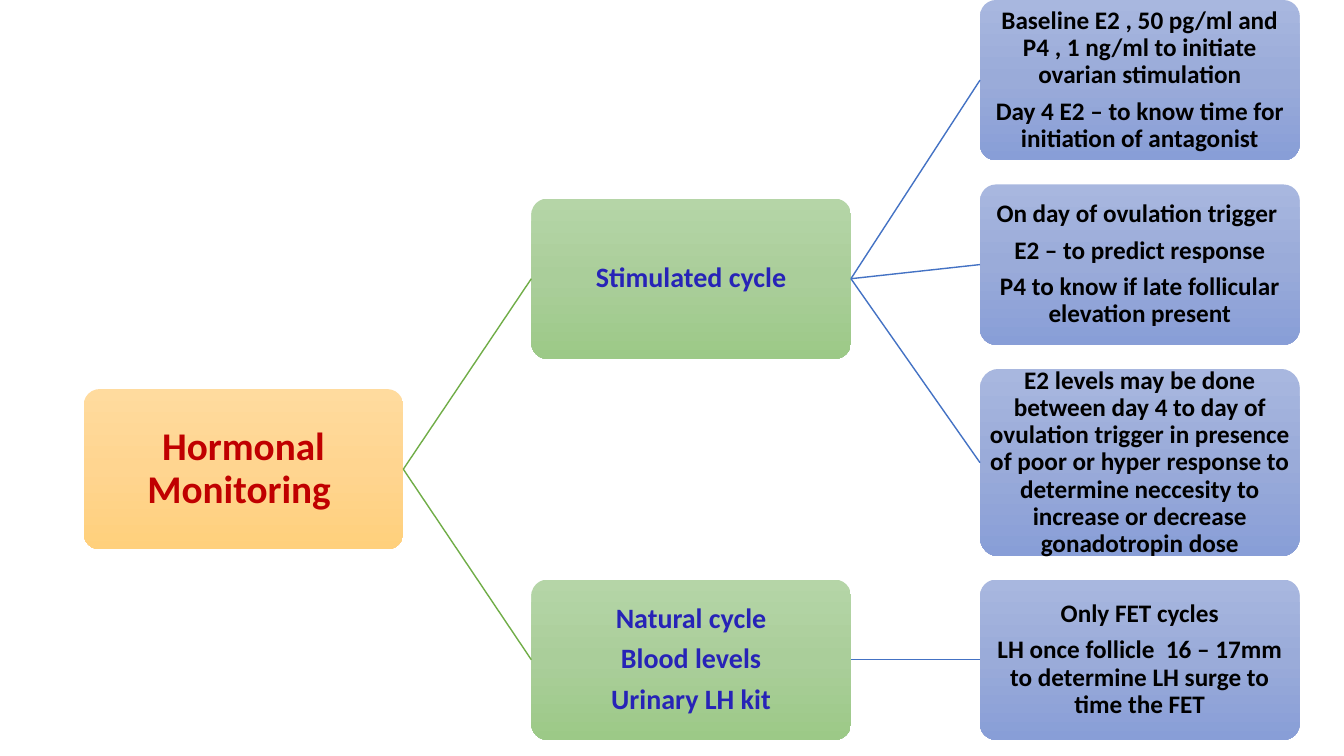
from copy import deepcopy
from dataclasses import dataclass

from pptx import Presentation
from pptx.dml.color import RGBColor as Rgb
from pptx.enum.shapes import MSO_CONNECTOR as Link, MSO_SHAPE as Form
from pptx.enum.text import MSO_ANCHOR as Anchor, PP_ALIGN as Align
from pptx.oxml.ns import qn
from pptx.shapes.autoshape import Shape
from pptx.slide import Slide
from pptx.util import Emu, Pt

SCALE = 9144
WIDE, HIGH = 317, 159
COLS = (83, 527, 972)
INSET = 1

HEX = {
    "red": "C00000", "blue": "2723B7", "black": "000000",
    "gold1": "FFDB9E", "gold2": "FFD590", "gold3": "FFD07C",
    "leaf1": "B5D5A7", "leaf2": "AACE9A", "leaf3": "9CC987",
    "sky1": "A8B7DF", "sky2": "9AABD9", "sky3": "889ED7",
    "green": "70AD47", "azure": "4472C4",
}


@dataclass(frozen=True)
class Style:
    fill: str
    ink: str
    size: int
    edge: str


@dataclass(frozen=True)
class Node:
    level: int
    top: int
    lines: tuple[str, ...]
    kids: tuple["Node", ...] = ()
    high: int = HIGH


STYLES = (
    Style("gold", "red", 28, "green"),
    Style("leaf", "blue", 20, "green"),
    Style("sky", "black", 18, "azure"),
)

STIM = Node(1, 197, ("Stimulated cycle",), (
    Node(2, 0, (
        "Baseline E2 , 50 pg/ml and P4 , 1 ng/ml to initiate ovarian stimulation",
        "Day 4 E2 – to know time for initiation of antagonist",
    )),
    Node(2, 183, (
        "On day of ovulation trigger ",
        "E2 – to predict response",
        "P4 to know if late follicular elevation present",
    )),
    Node(2, 366, (
        "E2 levels may be done between day 4 to day of ovulation trigger "
        "in presence of poor or hyper response to determine neccesity to "
        "increase or decrease gonadotropin dose",
    ), high=186),
))
NAT = Node(1, 575, ("Natural cycle", "Blood levels", "Urinary LH kit"), (
    Node(2, 575, (
        "Only FET cycles",
        "LH once follicle  16 – 17mm to determine LH surge to time the FET",
    )),
))
ROOT = Node(0, 386, ("Hormonal Monitoring ",), (STIM, NAT))


def px(count: int) -> Emu:
    return Emu(count * SCALE)


def rgb(name: str) -> Rgb:
    return Rgb.from_string(HEX[name])


def shade(box: Shape, name: str) -> None:
    box.fill.gradient()
    box.fill.gradient_angle = 270
    stops = box._element.spPr.find(qn("a:gradFill")).find(qn("a:gsLst"))
    stops.insert(1, deepcopy(stops[0]))
    for i, stop in enumerate(box.fill.gradient_stops):
        stop.position = i / 2
        stop.color.rgb = rgb(f"{name}{i + 1}")


def write(box: Shape, lines: tuple[str, ...], style: Style) -> None:
    frame = box.text_frame
    frame.word_wrap = True
    frame.vertical_anchor = Anchor.MIDDLE
    frame.margin_left = frame.margin_right = px(INSET)
    frame.margin_top = frame.margin_bottom = px(INSET)
    for i, line in enumerate(lines):
        para = frame.add_paragraph() if i else frame.paragraphs[0]
        para.alignment = Align.CENTER
        para.line_spacing = 0.9
        if i:
            para.space_before = Pt(round(style.size * 0.36, 1))
        run = para.add_run()
        run.text = line
        font = run.font
        font.name, font.size, font.bold = "Calibri", Pt(style.size), True
        font.color.rgb = rgb(style.ink)


def join(slide: Slide, start: Shape, end: Shape, edge: str) -> None:
    line = slide.shapes.add_connector(Link.STRAIGHT, 0, 0, 0, 0)
    line.begin_connect(start, 3)
    line.end_connect(end, 1)
    line.line.color.rgb = rgb(edge)
    line.line.width = Pt(1)
    props = line._element.spPr
    props.append(props.makeelement(qn("a:effectLst"), {}))


def draw(slide: Slide, node: Node) -> Shape:
    style = STYLES[node.level]
    box = slide.shapes.add_shape(
        Form.ROUNDED_RECTANGLE,
        px(COLS[node.level]), px(node.top), px(WIDE), px(node.high),
    )
    box.adjustments[0] = 0.1
    box.shadow.inherit = False
    box.line.fill.background()
    shade(box, style.fill)
    write(box, node.lines, style)
    for kid in node.kids:
        join(slide, box, draw(slide, kid), STYLES[kid.level].edge)
    return box


def main() -> None:
    deck = Presentation()
    deck.slide_width, deck.slide_height = px(1333), px(750)
    draw(deck.slides.add_slide(deck.slide_layouts[6]), ROOT)
    deck.save("out.pptx")


if __name__ == "__main__":
    main()
